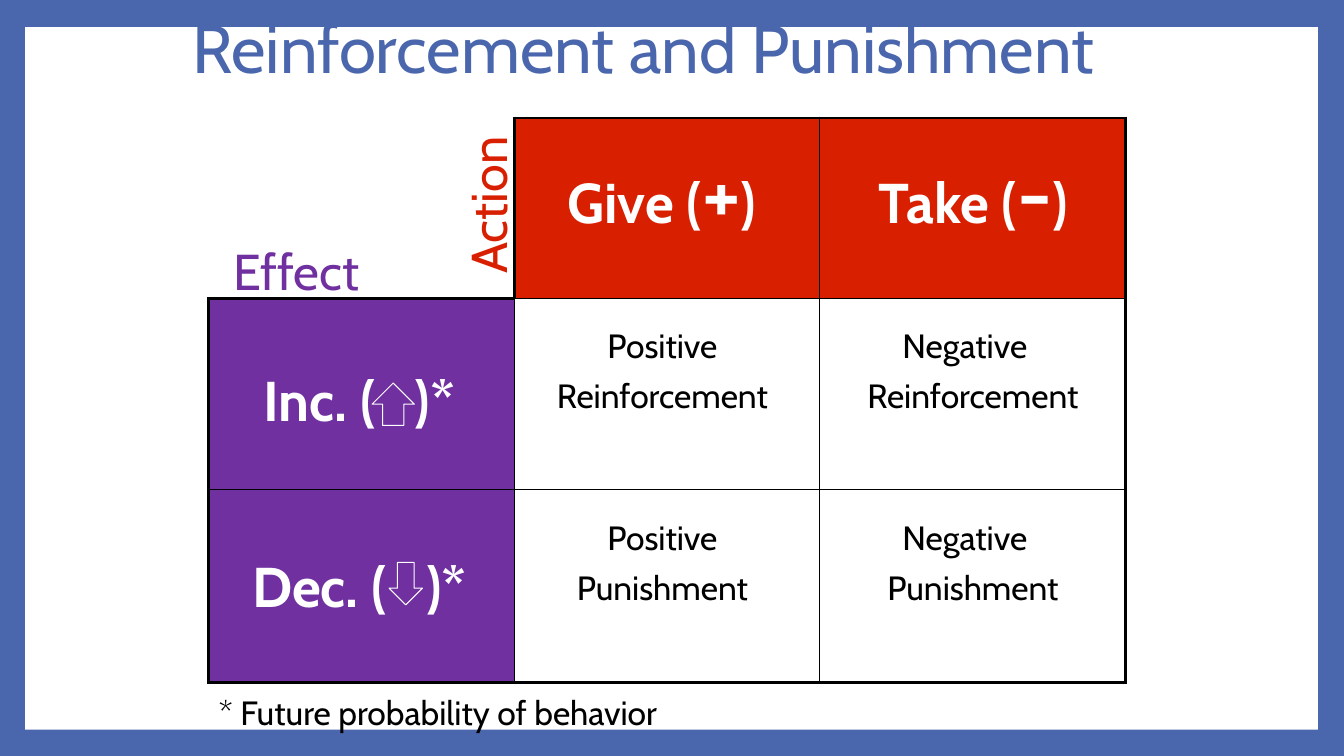
from dataclasses import dataclass

from lxml import etree
from pptx import Presentation
from pptx.dml.color import RGBColor
from pptx.enum.shapes import MSO_SHAPE
from pptx.enum.text import MSO_ANCHOR, MSO_AUTO_SIZE, PP_ALIGN
from pptx.oxml.ns import qn
from pptx.shapes.autoshape import Shape
from pptx.slide import Slide
from pptx.table import Table, _Cell
from pptx.util import Inches, Pt

BLUE = RGBColor(0x4A, 0x66, 0xAC)
RED = RGBColor(0xD8, 0x20, 0x00)
PURPLE = RGBColor(0x70, 0x30, 0xA0)
BLACK = RGBColor(0, 0, 0)
WHITE = RGBColor(0xFF, 0xFF, 0xFF)
LEFT, CENTER = PP_ALIGN.LEFT, PP_ALIGN.CENTER
MIDDLE = MSO_ANCHOR.MIDDLE
GROW = MSO_AUTO_SIZE.SHAPE_TO_FIT_TEXT
RECT, UP, DOWN = MSO_SHAPE.RECTANGLE, MSO_SHAPE.UP_ARROW, MSO_SHAPE.DOWN_ARROW
FONT = "Cabin"
THICK, THIN = 2.25, 1.0
COL = 3.03
ROWS = (1.79, 1.9, 1.91)


@dataclass(frozen=True)
class Box:
    x: float
    y: float
    w: float
    h: float


@dataclass(frozen=True)
class Label:
    box: Box
    text: str
    size: int
    color: RGBColor
    align: PP_ALIGN = CENTER
    bold: bool = False
    wrap: bool = True
    turn: int = 0


@dataclass(frozen=True)
class Effect:
    word: str
    top: float
    arrow: MSO_SHAPE
    box: Box


@dataclass(frozen=True)
class Action:
    word: str
    sign: str
    left: float


LABELS = (
    Label(Box(2.07, 6.82, 8.5, 0.5), "* Future probability of behavior", 24, BLACK, LEFT),
    Label(Box(2.15, 2.33, 1.58, 0.61), "Effect", 36, PURPLE, wrap=False),
    Label(Box(4, 1.73, 1.58, 0.61), "Action", 36, RED, wrap=False, turn=270),
)
EFFECTS = (
    Effect("Inc.", 3.58, UP, Box(3.69, 3.8, 0.42, 0.42)),
    Effect("Dec.", 5.42, DOWN, Box(3.86, 5.58, 0.33, 0.42)),
)
ACTIONS = (Action("Give", "+", 5.15), Action("Take", "-", 8.24))
KINDS = (("Positive", 5.07, 5.07), ("Negative", 8.07, 8.15))
RESULTS = (("Reinforcement", 3.17), ("Punishment", 5.08))


def place(box: Box) -> tuple:
    return Inches(box.x), Inches(box.y), Inches(box.w), Inches(box.h)


def add_label(slide: Slide, label: Label) -> Shape:
    shape = slide.shapes.add_textbox(*place(label.box))
    shape.rotation = label.turn
    frame = shape.text_frame
    frame.word_wrap = label.wrap
    if label.wrap:
        frame.auto_size = GROW
    para = frame.paragraphs[0]
    para.alignment = label.align
    font = para.font
    font.name, font.size, font.bold = FONT, Pt(label.size), label.bold
    font.color.rgb = label.color
    if label.text:
        para.add_run().text = label.text
    return shape


def add_title(slide: Slide) -> None:
    box = Box(1.81, 0.1, 9.4, 0.82)
    shape = add_label(slide, Label(box, "Reinforcement and Punishment", 48, BLUE, LEFT))
    frame = shape.text_frame
    frame.auto_size = MSO_AUTO_SIZE.NONE
    frame.vertical_anchor = MIDDLE
    frame.paragraphs[0].line_spacing = 0.9


def add_shape(slide: Slide, kind: MSO_SHAPE, box: Box) -> Shape:
    shape = slide.shapes.add_shape(kind, *place(box))
    shape.shadow.inherit = False
    return shape


def add_effect(slide: Slide, item: Effect) -> None:
    box = Box(2.15, item.top, 2.83, 0.77)
    shape = add_label(slide, Label(box, f"{item.word} (", 40, WHITE, bold=True))
    para = shape.text_frame.paragraphs[0]
    gap = para.add_run()
    gap.text = " "
    gap._r.get_or_add_rPr().set("spc", "1900")
    para.add_run().text = ")*"
    arrow = add_shape(slide, item.arrow, item.box)
    arrow.fill.background()
    arrow.line.color.rgb = WHITE
    arrow.line.width = Pt(0.75)


def add_action(slide: Slide, item: Action) -> None:
    box = Box(item.left, 1.33, 2.83, 1.11)
    shape = add_label(slide, Label(box, f"{item.word} (", 40, WHITE, bold=True))
    para = shape.text_frame.paragraphs[0]
    sign = para.add_run()
    sign.text = item.sign
    sign.font.size = Pt(60)
    para.add_run().text = ")"


def set_edge(cell: _Cell, side: str, width: float) -> None:
    props = cell._tc.get_or_add_tcPr()
    edge = etree.SubElement(props, qn(f"a:ln{side}"), w=str(Pt(width)))
    if width:
        fill = etree.SubElement(edge, qn("a:solidFill"))
        etree.SubElement(fill, qn("a:srgbClr"), val=str(BLACK))
    else:
        etree.SubElement(edge, qn("a:noFill"))


def style_cell(table: Table, row: int, col: int) -> None:
    cell = table.cell(row, col)
    corner = row == col == 0
    edges = {
        "L": 0 if corner else THICK if col == 0 or (row, col) == (0, 1) else THIN,
        "R": THICK if corner or col == 2 else THIN,
        "T": 0 if corner else THICK if row == 0 or (row, col) == (1, 0) else THIN,
        "B": THICK if corner or row == 2 else THIN,
    }
    for side, width in edges.items():
        set_edge(cell, side, width)
    if corner or (row and col):
        cell.fill.background()
    else:
        cell.fill.solid()
        cell.fill.fore_color.rgb = PURPLE if row else RED


def add_grid(slide: Slide) -> None:
    box = Box(2.07, 1.17, 3 * COL, sum(ROWS))
    table = slide.shapes.add_table(3, 3, *place(box)).table
    table.first_row = table.horz_banding = False
    for col in table.columns:
        col.width = Inches(COL)
    for row, high in enumerate(ROWS):
        table.rows[row].height = Inches(high)
        for col in range(3):
            style_cell(table, row, col)


def main() -> None:
    deck = Presentation()
    deck.slide_width, deck.slide_height = Inches(13.33), Inches(7.5)
    slide = deck.slides.add_slide(deck.slide_layouts[6])
    back = slide.background.fill
    back.solid()
    back.fore_color.rgb = BLUE
    panel = add_shape(slide, RECT, Box(0.25, 0.27, 12.82, 6.97))
    panel.fill.solid()
    panel.fill.fore_color.rgb = WHITE
    panel.line.fill.background()
    add_title(slide)
    add_grid(slide)
    for effect in EFFECTS:
        add_effect(slide, effect)
    for action in ACTIONS:
        add_action(slide, action)
    for result, top in RESULTS:
        for kind, left, under in KINDS:
            add_label(slide, Label(Box(left, top, 3, 0.5), kind, 24, BLACK))
            add_label(slide, Label(Box(under, top + 0.5, 3, 0.5), result, 24, BLACK))
    for label in LABELS:
        add_label(slide, label)
    deck.save("out.pptx")


if __name__ == "__main__":
    main()
